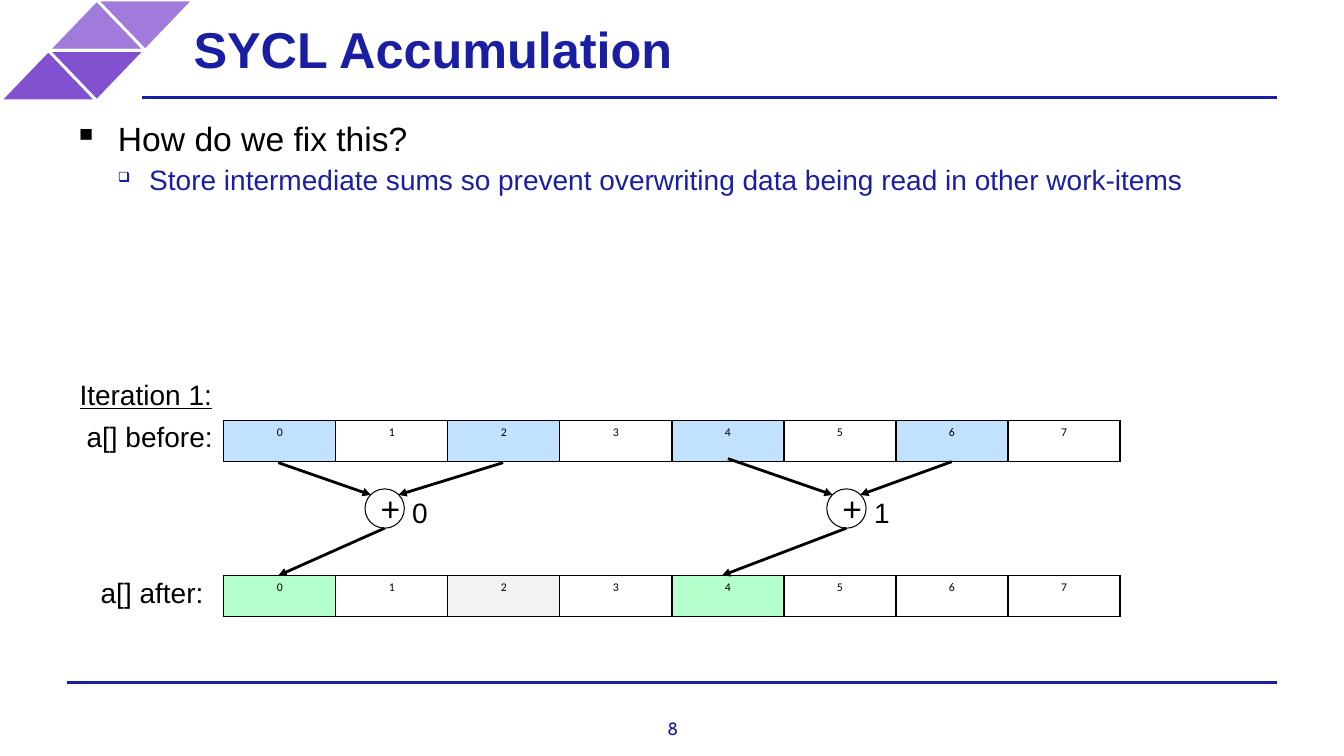
from lxml import etree
from pptx import Presentation
from pptx.dml.color import RGBColor
from pptx.enum.shapes import MSO_CONNECTOR, MSO_SHAPE
from pptx.enum.text import MSO_ANCHOR, PP_ALIGN
from pptx.oxml.ns import qn
from pptx.util import Inches, Pt

STRAIGHT = MSO_CONNECTOR.STRAIGHT
TRIANGLE, OVAL = MSO_SHAPE.ISOSCELES_TRIANGLE, MSO_SHAPE.OVAL
MIDDLE = MSO_ANCHOR.MIDDLE
LEFT, CENTER = PP_ALIGN.LEFT, PP_ALIGN.CENTER
NAVY, BLACK, WHITE = "191EA2", "000000", "FFFFFF"
LILAC, PURPLE = "A07BDB", "8151CF"
READ, WRITTEN, STALE = "C1E1FE", "B4FFCC", "F2F2F2"
CELL_COUNT = 8


def color(hex_string):
    """Turn a hex string into a colour."""
    return RGBColor.from_string(hex_string)


def style_text(para, size, hex_color, font="Arial", align=LEFT):
    """Set the font and alignment of a whole paragraph."""
    para.alignment = align
    para.font.name = font
    para.font.size = Pt(size)
    para.font.color.rgb = color(hex_color)


def set_margins(frame, inset):
    """Give a text frame the same inset on all sides."""
    frame.margin_left = frame.margin_right = Inches(inset)
    frame.margin_top = frame.margin_bottom = Inches(inset)


def add_line(page, start, end, hex_color=BLACK, arrow=False):
    """Draw a straight line, with an arrowhead at its end if asked."""
    line = page.shapes.add_connector(
        STRAIGHT, *(Inches(value) for value in (*start, *end)))
    line.line.color.rgb = color(hex_color)
    line.line.width = Pt(2)
    if arrow:
        outline = line.line._get_or_add_ln()
        etree.SubElement(outline, qn("a:tailEnd"), type="triangle")
    etree.SubElement(line._element.spPr, qn("a:effectLst"))


def add_shape(page, kind, left, top, width, height, fill, outline, weight):
    """Draw a filled preset shape without shadow."""
    shape = page.shapes.add_shape(
        kind, Inches(left), Inches(top), Inches(width), Inches(height))
    shape.shadow.inherit = False
    shape.fill.solid()
    shape.fill.fore_color.rgb = color(fill)
    shape.line.color.rgb = color(outline)
    shape.line.width = Pt(weight)
    return shape


def add_label(page, left, top, width, text, underline=False):
    """Write a one-line diagram label."""
    box = page.shapes.add_textbox(
        Inches(left), Inches(top), Inches(width), Inches(0.38))
    box.text_frame.word_wrap = True
    para = box.text_frame.paragraphs[0]
    para.text = text
    para.line_spacing = Pt(20)
    style_text(para, 20, BLACK)
    if underline:
        para.font.underline = True


def add_emblem(page, left, top):
    """Build the slanted emblem from four triangles."""
    width, height = 0.96, 0.5
    for row, fill in enumerate((LILAC, PURPLE)):
        for step in range(2):
            piece = add_shape(
                page, TRIANGLE, left + (1 - row + step) * width / 2,
                top + row * height, width, height, fill, WHITE, 2)
            piece.rotation = 180 * step


def add_header(page, left, top):
    """Place the title and the rule below it."""
    add_line(page, (left, top + 0.97), (12.67, top + 0.97), NAVY)
    title = page.shapes.title
    title.left, title.top = Inches(left + 0.37), Inches(top)
    title.width, title.height = Inches(7.99), Inches(0.95)
    frame = title.text_frame
    frame.text = "SYCL Accumulation"
    frame.vertical_anchor = MIDDLE
    set_margins(frame, 0.14)
    style_text(frame.paragraphs[0], 36, NAVY)
    frame.paragraphs[0].font.bold = True


def add_footer(page, left, top):
    """Place the bottom rule and the page number."""
    add_line(page, (left, top), (12.67, top), NAVY)
    box = page.shapes.add_textbox(
        Inches(left + 5.96), Inches(top + 0.35), Inches(0.1), Inches(0.21))
    set_margins(box.text_frame, 0)
    box.text_frame.word_wrap = False
    para = box.text_frame.paragraphs[0]
    para.text = "8"
    style_text(para, 12.7, NAVY, "Cabin", CENTER)


def add_bullets(page, left, top, width, height):
    """Write the question and its answer as bullets."""
    box = page.shapes.add_textbox(
        Inches(left), Inches(top), Inches(width), Inches(height))
    frame = box.text_frame
    frame.word_wrap = True
    set_margins(frame, 0)
    items = [
        ("How do we fix this?", "▪", 100, 0.5, -0.44, 24, BLACK),
        ("Store intermediate sums so prevent overwriting data being read "
         "in other work-items", "❑", 50, 0.81, -0.31, 20, NAVY),
    ]
    for level, (text, mark, scale, margin, indent, size, ink) in enumerate(items):
        para = frame.add_paragraph() if level else frame.paragraphs[0]
        para.text = text
        para.level = level
        if level:
            para.space_before = Pt(3)
        properties = para._p.get_or_add_pPr()
        properties.set("marL", str(Inches(margin)))
        properties.set("indent", str(Inches(indent)))
        etree.SubElement(properties, qn("a:buSzPct"), val=str(scale * 1000))
        etree.SubElement(properties, qn("a:buChar"), char=mark)
        style_text(para, size, ink)


def add_border(cell):
    """Outline a table cell in black."""
    properties = cell._tc.get_or_add_tcPr()
    for position, side in enumerate(("a:lnL", "a:lnR", "a:lnT", "a:lnB")):
        edge = etree.Element(qn(side), w=str(Pt(1)))
        fill = etree.SubElement(edge, qn("a:solidFill"))
        etree.SubElement(fill, qn("a:srgbClr"), val=BLACK)
        properties.insert(position, edge)


def add_array(page, left, top, fills):
    """Draw the array as a one-row table with the given cell fills."""
    table = page.shapes.add_table(
        1, CELL_COUNT, Inches(left), Inches(top),
        Inches(8.89), Inches(0.41)).table
    for index, cell in enumerate(table.iter_cells()):
        cell.fill.solid()
        cell.fill.fore_color.rgb = color(fills.get(index, WHITE))
        cell.text = str(index)
        style_text(cell.text_frame.paragraphs[0], 8.4, BLACK, "Calibri", CENTER)
        add_border(cell)


def add_sum(page, left, top, name, sources, target):
    """Draw one addition with its two inputs and its output."""
    size = 0.39
    circle = add_shape(page, OVAL, left, top, size, size, WHITE, BLACK, 0.75)
    circle.text_frame.vertical_anchor = MIDDLE
    para = circle.text_frame.paragraphs[0]
    para.text = "+"
    style_text(para, 24, BLACK)
    for source, offset in zip(sources, (0.06, 0.33)):
        add_line(page, source, (left + offset, top + 0.06), arrow=True)
    add_line(page, (left + size / 2, top + size), target, arrow=True)
    add_label(page, left + 0.37, top + 0.07, 0.28, name)


def add_diagram(page, left, top):
    """Draw the first iteration between the two states of the array."""
    add_label(page, left, top, 1.52, "Iteration 1:", underline=True)
    add_label(page, left + 0.07, top + 0.42, 1.52, "a[] before:")
    add_label(page, left + 0.21, top + 1.97, 1.52, "a[] after:")
    array_left, before, after = left + 1.53, top + 0.42, top + 1.96
    add_array(page, array_left, before, dict.fromkeys((0, 2, 4, 6), READ))
    add_array(page, array_left, after, {0: WRITTEN, 2: STALE, 4: WRITTEN})
    sums = [
        (2.93, "0", ((2.07, 0.84), (4.3, 0.84)), 2.07),
        (7.51, "1", ((6.53, 0.8), (8.75, 0.83)), 6.47),
    ]
    for across, name, sources, target in sums:
        starts = [(left + x, top + y) for x, y in sources]
        add_sum(page, left + across, top + 1.1, name, starts,
                (left + target, after))


def main():
    """Build the deck and save it."""
    deck = Presentation()
    deck.slide_width, deck.slide_height = Inches(13.33), Inches(7.5)
    page = deck.slides.add_slide(deck.slide_layouts[5])
    add_emblem(page, 0, 0)
    add_header(page, 1.41, 0)
    add_bullets(page, 0.67, 1.17, 12.52, 4.89)
    add_diagram(page, 0.69, 3.75)
    add_footer(page, 0.66, 6.77)
    deck.save("out.pptx")


if __name__ == "__main__":
    main()
